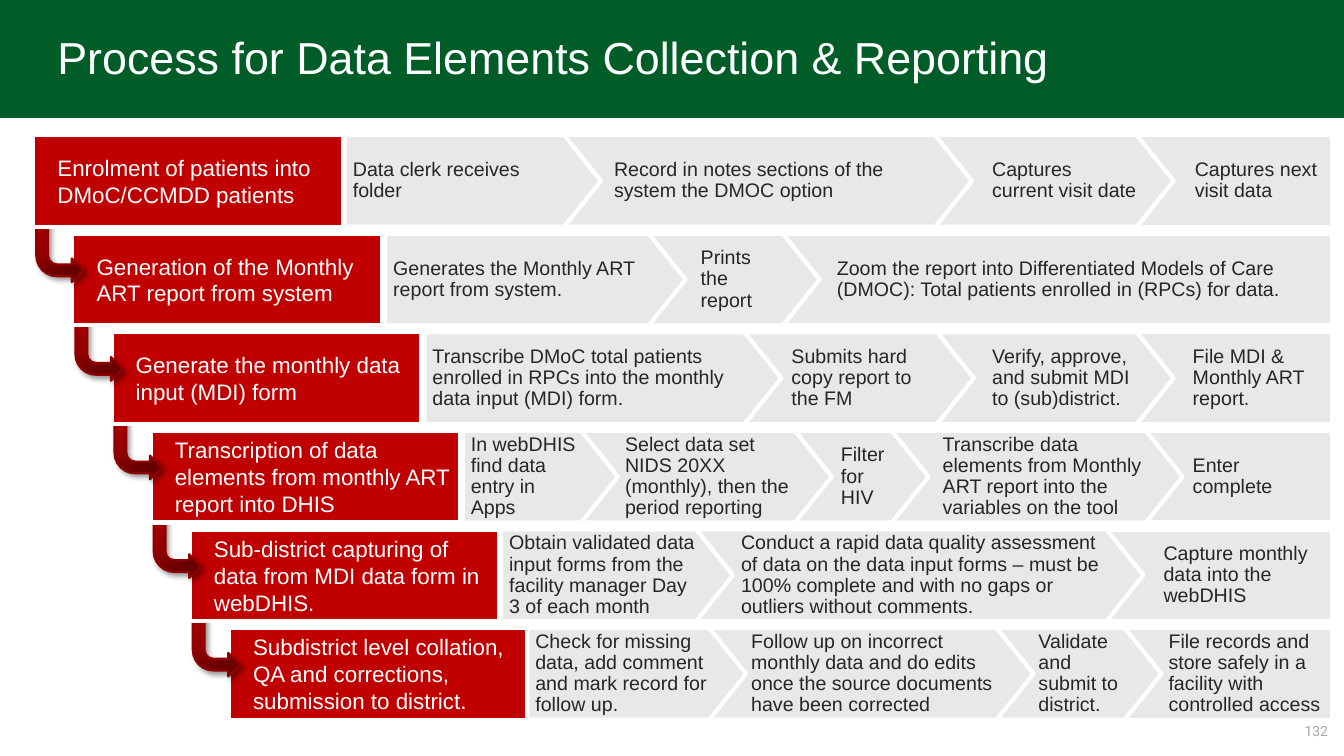
from lxml import etree
from pptx import Presentation
from pptx.dml.color import RGBColor
from pptx.enum.shapes import MSO_SHAPE as Shape
from pptx.enum.text import MSO_ANCHOR as Anchor, PP_ALIGN as Align
from pptx.oxml import parse_xml
from pptx.oxml.ns import nsdecls, qn
from pptx.util import Inches, Pt

TITLE = "Process for Data Elements Collection & Reporting"
PAGE_NUMBER = "132"

# Stage name, right inset of the last step, steps as (left, width, text)
STAGES = [
    ("Enrolment of patients into DMoC/CCMDD patients", 0, [
        (3.42, 2.54, "Data clerk receives folder"),
        (5.54, 4.1, "Record in notes sections of the system the DMOC option"),
        (9.29, 2.35, "Captures current visit date"),
        (11.3, 1.91, "Captures next visit data")]),
    ("Generation of the Monthly ART report from system", 0, [
        (3.82, 2.98, "Generates the Monthly ART report from system."),
        (6.4, 1.73, "Prints the report"),
        (7.75, 5.46, "Zoom the report into Differentiated Models of Care (DMOC): "
                     "Total patients enrolled in (RPCs) for data.")]),
    ("Generate the monthly data input (MDI) form", 0.08, [
        (4.21, 3.54, "Transcribe DMoC total patients enrolled in RPCs into the "
                     "monthly data input (MDI) form."),
        (7.3, 2.36, "Submits hard copy report to the FM"),
        (9.29, 2.35, "Verify, approve, and submit MDI to (sub)district."),
        (11.28, 1.93, "File MDI & Monthly ART report.")]),
    ("Transcription of data elements from monthly ART report into DHIS", 0.08, [
        (4.59, 1.54, "In webDHIS find data entry in Apps"),
        (5.65, 2.6, "Select data set NIDS 20XX (monthly), then the period reporting"),
        (7.79, 1.42, "Filter for HIV"),
        (8.8, 2.93, "Transcribe data elements from Monthly ART report into the "
                    "variables on the tool"),
        (11.28, 1.93, "Enter complete")]),
    ("Sub-district capturing of data from MDI data form in webDHIS.", 0.08, [
        (4.97, 2.3, "Obtain validated data input forms from the facility manager "
                    "Day 3 of each month"),
        (6.8, 4.54, "Conduct a rapid data quality assessment of data on the data "
                    "input forms – must be 100% complete and with no gaps or "
                    "outliers without comments."),
        (10.99, 2.22, "Capture monthly data into the webDHIS")]),
    ("Subdistrict level collation, QA and corrections, submission to district.", 0, [
        (5.23, 2.17, "Check for missing data, add comment and mark record for follow up."),
        (6.9, 3.35, "Follow up on incorrect monthly data and do edits once the "
                    "source documents have been corrected"),
        (9.75, 1.77, "Validate and submit to district."),
        (11.04, 2.17, "File records and store safely in a facility with controlled access")]),
]

GREEN = RGBColor(0x00, 0x5D, 0x28)
RED = RGBColor(0xC0, 0x00, 0x00)
DARK_RED = RGBColor(0x92, 0x00, 0x00)
LIGHT_GREY = RGBColor(0xE8, 0xE8, 0xE8)
MID_GREY = RGBColor(0xA6, 0xA6, 0xA6)
CHARCOAL = RGBColor(0x26, 0x26, 0x26)
WHITE = RGBColor(0xFF, 0xFF, 0xFF)
GRADIENT = [(20, "680000"), (50, "940000"), (89, "B00000")]

ROW_TOP, ROW_PITCH, ROW_HEIGHT = 1.34, 0.978, 0.91
STAGE_LEFT, STAGE_SHIFT = 0.33, 0.388
STAGE_WIDTH, LAST_STAGE_WIDTH = 3.07, 3.03
POINT = 0.401

STAGE_TEXT = {"size": Pt(16), "name": "Arial", "color": WHITE}
STEP_TEXT = {"size": Pt(14), "name": "Arial", "color": CHARCOAL}
TITLE_TEXT = {"size": Pt(32), "name": "Arial", "color": WHITE}
NUMBER_TEXT = {"size": Pt(10), "name": "Roboto", "color": MID_GREY}


def write(box, text, look, insets=(0.1, 0.05, 0.1, 0.05), align=Align.LEFT, spacing=1.0):
    frame = box.text_frame
    frame.word_wrap = True
    frame.vertical_anchor = Anchor.MIDDLE
    for side, inset in zip(("left", "top", "right", "bottom"), insets):
        setattr(frame, f"margin_{side}", Inches(inset))
    para = frame.paragraphs[0]
    para.alignment = align
    para.line_spacing = spacing
    span = para.add_run()
    span.text = text
    for key, value in look.items():
        if key == "color":
            span.font.color.rgb = value
        else:
            setattr(span.font, key, value)


def add_block(page, kind, place, fill, line=None, weight=3):
    block = page.shapes.add_shape(kind, *map(Inches, place))
    block.shadow.inherit = False
    block.fill.solid()
    block.fill.fore_color.rgb = fill
    if line is None:
        block.line.fill.background()
    else:
        block.line.color.rgb = line
        block.line.width = Pt(weight)
    return block


def add_turn(page, left, top):
    """Shaded arrow that bends down from one stage into the next."""
    turn = add_block(page, Shape.BENT_ARROW, (left, top, 0.47, 0.83), RED, DARK_RED, 1.5)
    props = turn.element.spPr
    props.find(qn("a:xfrm")).set("flipV", "1")
    stops = "".join(f'<a:gs pos="{pos * 1000}"><a:srgbClr val="{color}"/></a:gs>'
                    for pos, color in GRADIENT)
    props.replace(props.find(qn("a:solidFill")), parse_xml(
        f'<a:gradFill {nsdecls("a")} rotWithShape="1"><a:gsLst>{stops}</a:gsLst>'
        '<a:lin ang="7200000" scaled="0"/></a:gradFill>'))
    shadow = etree.SubElement(props.find(qn("a:effectLst")), qn("a:outerShdw"),
                              blurRad=str(Pt(4)), dist=str(Pt(3)), dir="2700000",
                              algn="tl", rotWithShape="0")
    color = etree.SubElement(shadow, qn("a:srgbClr"), val="000000")
    etree.SubElement(color, qn("a:alpha"), val="40000")


def add_steps(page, steps, top, end_inset):
    """Draw from right to left so each point lies over the next step."""
    last = len(steps) - 1
    for index, (left, width, text) in reversed(list(enumerate(steps))):
        step = add_block(page, Shape.RIGHT_ARROW, (left, top, width, ROW_HEIGHT),
                         LIGHT_GREY, WHITE)
        step.adjustments[0] = 1
        step.adjustments[1] = 0 if index == last else POINT
        insets = (0.55 if index else 0.08, 0.04, end_inset if index == last else 0, 0.04)
        write(step, text, STEP_TEXT, insets, spacing=0.9)


def main():
    deck = Presentation()
    deck.slide_width, deck.slide_height = Inches(13.33), Inches(7.5)
    page = deck.slides.add_slide(deck.slide_layouts[6])

    add_block(page, Shape.RECTANGLE, (0, 0, 13.33, 1.17), GREEN)
    title = page.shapes.add_textbox(*map(Inches, (0.47, 0.15, 10.88, 0.88)))
    write(title, TITLE, TITLE_TEXT, spacing=0.9)

    last = len(STAGES) - 1
    for row, (name, end_inset, steps) in reversed(list(enumerate(STAGES))):
        left = STAGE_LEFT + row * STAGE_SHIFT
        top = ROW_TOP + row * ROW_PITCH
        if row < last:
            add_turn(page, left + 0.03, top + 0.63)
        width = LAST_STAGE_WIDTH if row == last else STAGE_WIDTH
        stage = add_block(page, Shape.RECTANGLE, (left, top, width, ROW_HEIGHT), RED, WHITE)
        write(stage, name, STAGE_TEXT, (0.24, 0.04, 0.04, 0.04))
        add_steps(page, steps, top, end_inset)

    number = page.shapes.add_textbox(*map(Inches, (10.27, 7.05, 3, 0.4)))
    write(number, PAGE_NUMBER, NUMBER_TEXT, align=Align.RIGHT)
    deck.save("out.pptx")


if __name__ == "__main__":
    main()
